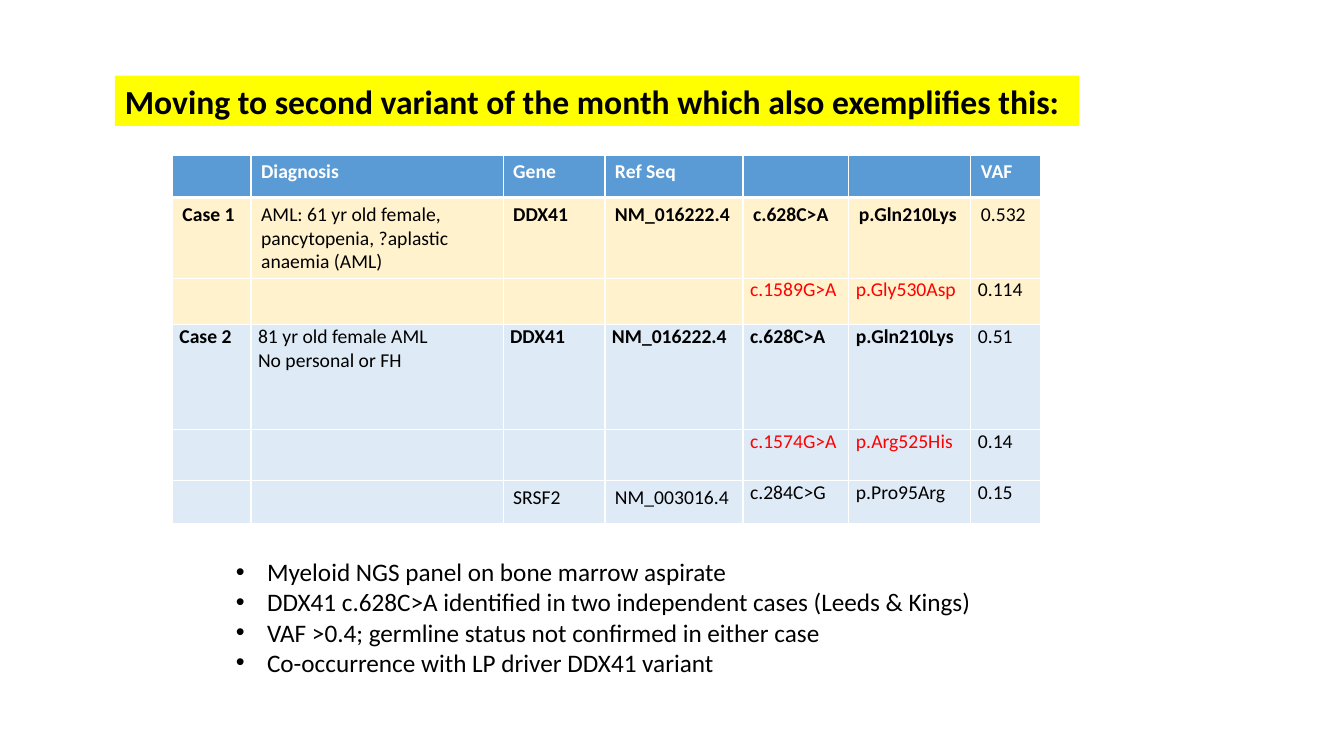
from dataclasses import dataclass

from lxml.etree import SubElement
from pptx import Presentation
from pptx.dml.color import RGBColor
from pptx.enum.shapes import MSO_SHAPE as Preset
from pptx.enum.text import MSO_ANCHOR as Anchor, MSO_AUTO_SIZE as AutoSize, PP_ALIGN as Align
from pptx.oxml.ns import qn
from pptx.util import Inches, Pt


@dataclass(frozen=True)
class Theme:
    font: str = "Calibri"
    title_size: int = 24
    bullet_size: int = 18
    table_size: int = 14
    black: str = "000000"
    white: str = "FFFFFF"
    red: str = "FF0000"
    highlight: str = "FFFF00"
    header: str = "5B9BD5"
    case_1: str = "FFF2CC"
    case_2: str = "DEEBF7"


THEME = Theme()


@dataclass(frozen=True)
class Entry:
    text: str = ""
    bold: bool = False
    color: str = THEME.black
    tight: bool = False


@dataclass(frozen=True)
class VariantRow:
    height: float
    fill: str
    entries: list[Entry]
    top_border: float = 1
    bottom_border: float = 1


def plain(text: str) -> Entry:
    return Entry(text)


def strong(text: str) -> Entry:
    return Entry(text, bold=True)


def tight(text: str, bold: bool = False, color: str = THEME.black) -> Entry:
    return Entry(text, bold, color, tight=True)


def heading(text: str) -> Entry:
    return Entry(text, bold=True, color=THEME.white)


def driver_entries(coding: str, protein: str, frequency: str) -> list[Entry]:
    return [Entry()] * 4 + [
        tight(coding, color=THEME.red),
        tight(protein, color=THEME.red),
        tight(frequency),
    ]


TITLE = "Moving to second variant of the month which also exemplifies this:"
COLUMN_WIDTHS = [0.78, 2.5, 1.01, 1.37, 1.05, 1.21, 0.69]
HEADINGS = ["", "Diagnosis", "Gene", "Ref Seq", "", "", "VAF"]
SHARED_VARIANT = ["DDX41", "NM_016222.4", "c.628C>A", "p.Gln210Lys"]
ROWS = [
    VariantRow(0.42, THEME.header, [heading(text) for text in HEADINGS], bottom_border=3),
    VariantRow(0.8, THEME.case_1, [
        strong("Case 1"),
        plain("AML: 61 yr old female, pancytopenia, ?aplastic anaemia (AML)"),
        *[strong(text) for text in SHARED_VARIANT],
        plain("0.532"),
    ], top_border=3),
    VariantRow(0.46, THEME.case_1, driver_entries("c.1589G>A", "p.Gly530Asp", "0.114")),
    VariantRow(1.04, THEME.case_2, [
        tight("Case 2", bold=True),
        tight("81 yr old female AML\nNo personal or FH"),
        *[tight(text, bold=True) for text in SHARED_VARIANT],
        tight("0.51"),
    ]),
    VariantRow(0.51, THEME.case_2, driver_entries("c.1574G>A", "p.Arg525His", "0.14")),
    VariantRow(0.42, THEME.case_2, [
        Entry(), Entry(), plain("SRSF2"), plain("NM_003016.4"),
        tight("c.284C>G"), tight("p.Pro95Arg"), tight("0.15"),
    ]),
]
BULLETS = [
    "Myeloid NGS panel on bone marrow aspirate",
    "DDX41 c.628C>A identified in two independent cases (Leeds & Kings)",
    "VAF >0.4; germline status not confirmed in either case",
    "Co-occurrence with LP driver DDX41 variant",
]


def set_font(paragraph, size: int, color: str = THEME.black, bold: bool = False) -> None:
    font = paragraph.font
    font.name = THEME.font
    font.size = Pt(size)
    font.bold = bold
    font.color.rgb = RGBColor.from_string(color)


def add_title(slide) -> None:
    shape = slide.shapes.add_shape(
        Preset.RECTANGLE, Inches(1.14), Inches(0.75), Inches(9.56), Inches(0.5))
    shape.shadow.inherit = False
    shape.fill.solid()
    shape.fill.fore_color.rgb = RGBColor.from_string(THEME.highlight)
    shape.line.fill.background()
    frame = shape.text_frame
    frame.word_wrap = True
    frame.auto_size = AutoSize.SHAPE_TO_FIT_TEXT
    frame.vertical_anchor = Anchor.TOP
    frame.text = TITLE
    paragraph = frame.paragraphs[0]
    paragraph.alignment = Align.LEFT
    set_font(paragraph, THEME.title_size, bold=True)


def add_borders(cell, row: VariantRow) -> None:
    properties = cell._tc.get_or_add_tcPr()
    widths = {"L": 1, "R": 1, "T": row.top_border, "B": row.bottom_border}
    for side, width in widths.items():
        line = SubElement(properties, qn(f"a:ln{side}"), w=str(Pt(width)))
        fill = SubElement(line, qn("a:solidFill"))
        SubElement(fill, qn("a:srgbClr"), val=THEME.white)


def fill_cell(cell, entry: Entry, row: VariantRow) -> None:
    add_borders(cell, row)
    cell.fill.solid()
    cell.fill.fore_color.rgb = RGBColor.from_string(row.fill)
    if entry.tight:
        cell.margin_left = cell.margin_right = Inches(0.07)
        cell.margin_top = cell.margin_bottom = 0
    cell.text_frame.text = entry.text
    for paragraph in cell.text_frame.paragraphs:
        set_font(paragraph, THEME.table_size, entry.color, entry.bold)


def add_variant_table(slide) -> None:
    table = slide.shapes.add_table(
        len(ROWS), len(COLUMN_WIDTHS), Inches(1.71), Inches(1.54),
        Inches(sum(COLUMN_WIDTHS)), Inches(sum(row.height for row in ROWS))).table
    table.horz_banding = False
    for column, width in zip(table.columns, COLUMN_WIDTHS):
        column.width = Inches(width)
    for table_row, row in zip(table.rows, ROWS):
        table_row.height = Inches(row.height)
        for cell, entry in zip(table_row.cells, row.entries):
            fill_cell(cell, entry, row)


def add_bullets(slide) -> None:
    box = slide.shapes.add_textbox(Inches(2.24), Inches(5.47), Inches(8.35), Inches(1.31))
    frame = box.text_frame
    frame.word_wrap = True
    frame.auto_size = AutoSize.SHAPE_TO_FIT_TEXT
    frame.text = "\n".join(BULLETS)
    for paragraph in frame.paragraphs:
        properties = paragraph._p.get_or_add_pPr()
        properties.set("marL", str(Inches(0.31)))
        properties.set("indent", str(Inches(-0.31)))
        SubElement(properties, qn("a:buFont"), typeface="Arial")
        SubElement(properties, qn("a:buChar"), char="•")
        set_font(paragraph, THEME.bullet_size)


def main() -> None:
    presentation = Presentation()
    presentation.slide_width = Inches(13.33)
    presentation.slide_height = Inches(7.5)
    slide = presentation.slides.add_slide(presentation.slide_layouts[6])
    add_bullets(slide)
    add_variant_table(slide)
    add_title(slide)
    presentation.save("out.pptx")


if __name__ == "__main__":
    main()
